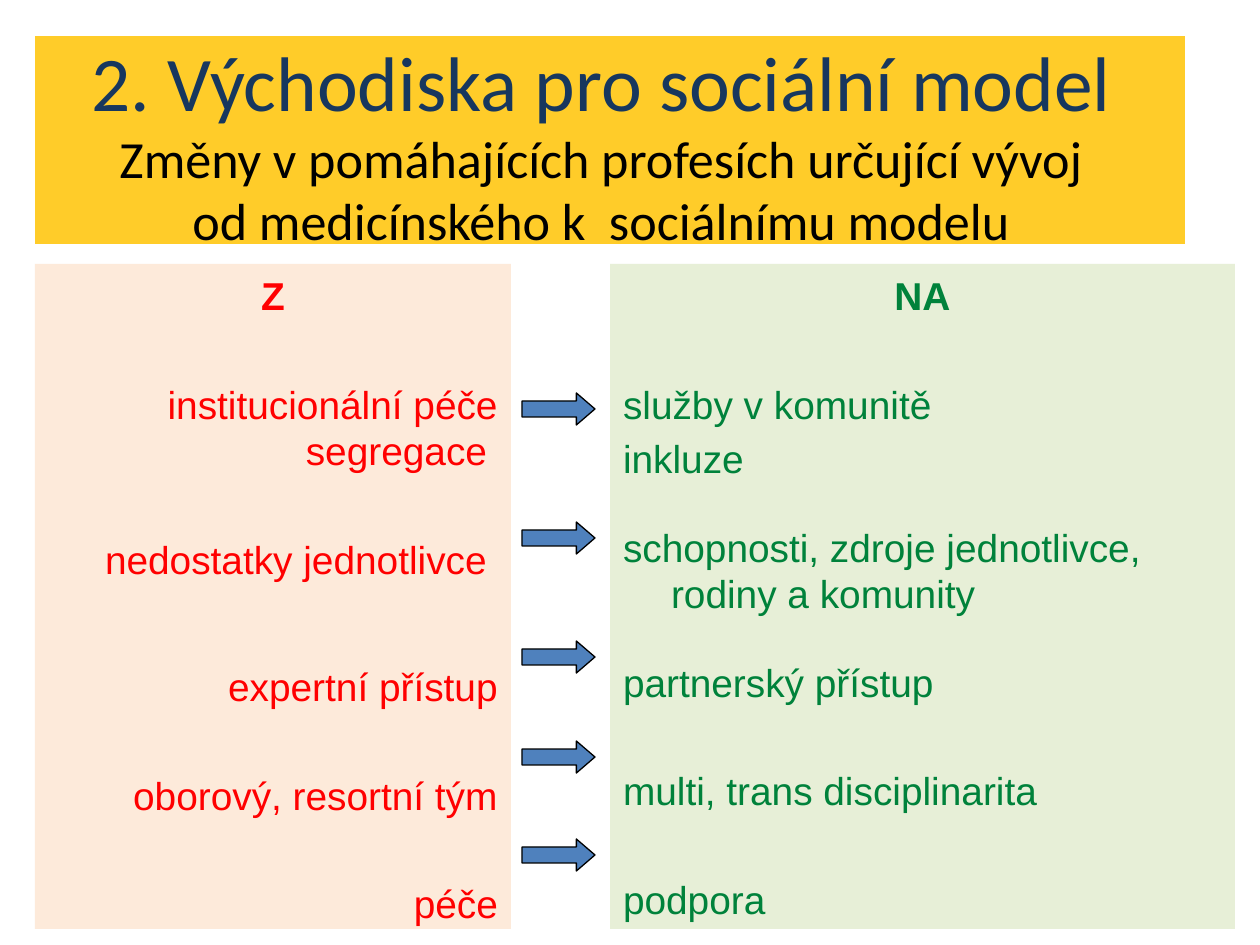
from dataclasses import dataclass

from pptx import Presentation
from pptx.dml.color import RGBColor
from pptx.enum.shapes import MSO_SHAPE
from pptx.enum.text import MSO_ANCHOR, MSO_AUTO_SIZE, PP_ALIGN
from pptx.util import Pt

LEFT, CENTER, RIGHT = PP_ALIGN.LEFT, PP_ALIGN.CENTER, PP_ALIGN.RIGHT
TOP = MSO_ANCHOR.TOP
NO_AUTOFIT = MSO_AUTO_SIZE.NONE
RECTANGLE, RIGHT_ARROW = MSO_SHAPE.RECTANGLE, MSO_SHAPE.RIGHT_ARROW

PX_PER_INCH = 126
EMU_PER_PX = 914400 / PX_PER_INCH


def px(length: float) -> int:
    return round(length * EMU_PER_PX)


@dataclass(frozen=True)
class Theme:
    banner: str = "FFCC29"
    heading: str = "17375E"
    ink: str = "000000"
    from_fill: str = "FDEADA"
    from_text: str = "FF0000"
    to_fill: str = "E7EFD7"
    to_text: str = "00823B"
    arrow: str = "4F81BD"
    heading_font: str = "Calibri"
    body_font: str = "Arial"
    heading_size: float = 44.2
    subtitle_size: float = 29.8
    body_size: float = 22.2
    heading_line: float = 52
    subtitle_line: float = 35.4
    body_line: float = 26.6
    outline: float = 0.75


@dataclass(frozen=True)
class Box:
    left: int
    top: int
    width: int
    height: int

    def emu(self) -> tuple[int, int, int, int]:
        return px(self.left), px(self.top), px(self.width), px(self.height)


@dataclass(frozen=True)
class Insets:
    left: int
    top: int
    right: int
    bottom: int = 0


@dataclass(frozen=True)
class Line:
    text: str
    font: str
    size: float
    color: str
    pitch: float
    align: PP_ALIGN
    gap: int = 0
    bold: bool = False
    hanging: int = 0


THEME = Theme()


def apply(target, values: dict) -> None:
    for attribute, value in values.items():
        setattr(target, attribute, value)


def add_panel(slide, box: Box, fill: str, insets: Insets, lines: list[Line]) -> None:
    panel = slide.shapes.add_shape(RECTANGLE, *box.emu())
    panel.shadow.inherit = False
    panel.fill.solid()
    panel.fill.fore_color.rgb = RGBColor.from_string(fill)
    panel.line.fill.background()
    frame = panel.text_frame
    apply(frame, {
        "word_wrap": True,
        "auto_size": NO_AUTOFIT,
        "vertical_anchor": TOP,
        "margin_left": px(insets.left),
        "margin_top": px(insets.top),
        "margin_right": px(insets.right),
        "margin_bottom": px(insets.bottom),
    })
    for index, line in enumerate(lines):
        paragraph = frame.add_paragraph() if index else frame.paragraphs[0]
        write_line(paragraph, line)


def write_line(paragraph, line: Line) -> None:
    apply(paragraph, {"alignment": line.align, "line_spacing": Pt(line.pitch)})
    if line.gap:
        paragraph.space_before = px(line.gap)
    if line.hanging:
        properties = paragraph._p.get_or_add_pPr()
        properties.set("marL", str(px(line.hanging)))
        properties.set("indent", str(-px(line.hanging)))
    run = paragraph.add_run()
    run.text = line.text
    apply(run.font, {"name": line.font, "size": Pt(line.size), "bold": line.bold})
    run.font.color.rgb = RGBColor.from_string(line.color)


def add_column(slide, box: Box, fill: str, color: str, align: PP_ALIGN,
               heading: str, items: list[tuple[str, int]]) -> None:
    style = {"font": THEME.body_font, "size": THEME.body_size, "color": color,
             "pitch": THEME.body_line, "hanging": 48}
    lines = [Line(heading, align=CENTER, bold=True, **style)]
    lines += [Line(text, align=align, gap=gap, **style) for text, gap in items]
    add_panel(slide, box, fill, Insets(13, 8, 13), lines)


def add_arrow(slide, box: Box) -> None:
    arrow = slide.shapes.add_shape(RIGHT_ARROW, *box.emu())
    arrow.shadow.inherit = False
    arrow.adjustments[0] = 0.5
    arrow.adjustments[1] = 0.58
    arrow.fill.solid()
    arrow.fill.fore_color.rgb = RGBColor.from_string(THEME.arrow)
    arrow.line.color.rgb = RGBColor.from_string(THEME.ink)
    arrow.line.width = Pt(THEME.outline)


# Gaps above the column items
NEXT, TOPIC, PAIR, WIDE = 8, 62, 42, 81

FROM_ITEMS = [
    ("institucionální péče segregace ", TOPIC),
    ("nedostatky jednotlivce ", TOPIC),
    ("expertní přístup", WIDE),
    ("oborový, resortní tým", TOPIC),
    ("péče", TOPIC),
]
TO_ITEMS = [
    ("služby v komunitě", TOPIC),
    ("inkluze", NEXT),
    ("schopnosti, zdroje jednotlivce, rodiny a komunity", PAIR),
    ("partnerský přístup", PAIR),
    ("multi, trans disciplinarita", TOPIC),
    ("podpora", TOPIC),
]
ARROW_TOPS = [393, 522, 641, 741, 839]


def main() -> None:
    deck = Presentation()
    deck.slide_width, deck.slide_height = px(1260), px(945)
    slide = deck.slides.add_slide(deck.slide_layouts[6])

    # Columns: from the medical model to the social model
    add_column(slide, Box(35, 264, 476, 665), THEME.from_fill, THEME.from_text,
               RIGHT, "Z", FROM_ITEMS)
    add_column(slide, Box(610, 264, 625, 665), THEME.to_fill, THEME.to_text,
               LEFT, "NA", TO_ITEMS)

    # Arrows between the columns
    for top in ARROW_TOPS:
        add_arrow(slide, Box(522, top, 73, 32))

    # Title banner
    subtitle = {"font": THEME.heading_font, "size": THEME.subtitle_size,
                "color": THEME.ink, "pitch": THEME.subtitle_line, "align": CENTER}
    add_panel(slide, Box(35, 36, 1150, 208), THEME.banner, Insets(13, 0, 31), [
        Line("2. Východiska pro sociální model", THEME.heading_font,
             THEME.heading_size, THEME.heading, THEME.heading_line, CENTER),
        Line("Změny v pomáhajících profesích určující vývoj", **subtitle),
        Line("od medicínského k  sociálnímu modelu", **subtitle),
    ])

    deck.save("out.pptx")


if __name__ == "__main__":
    main()
